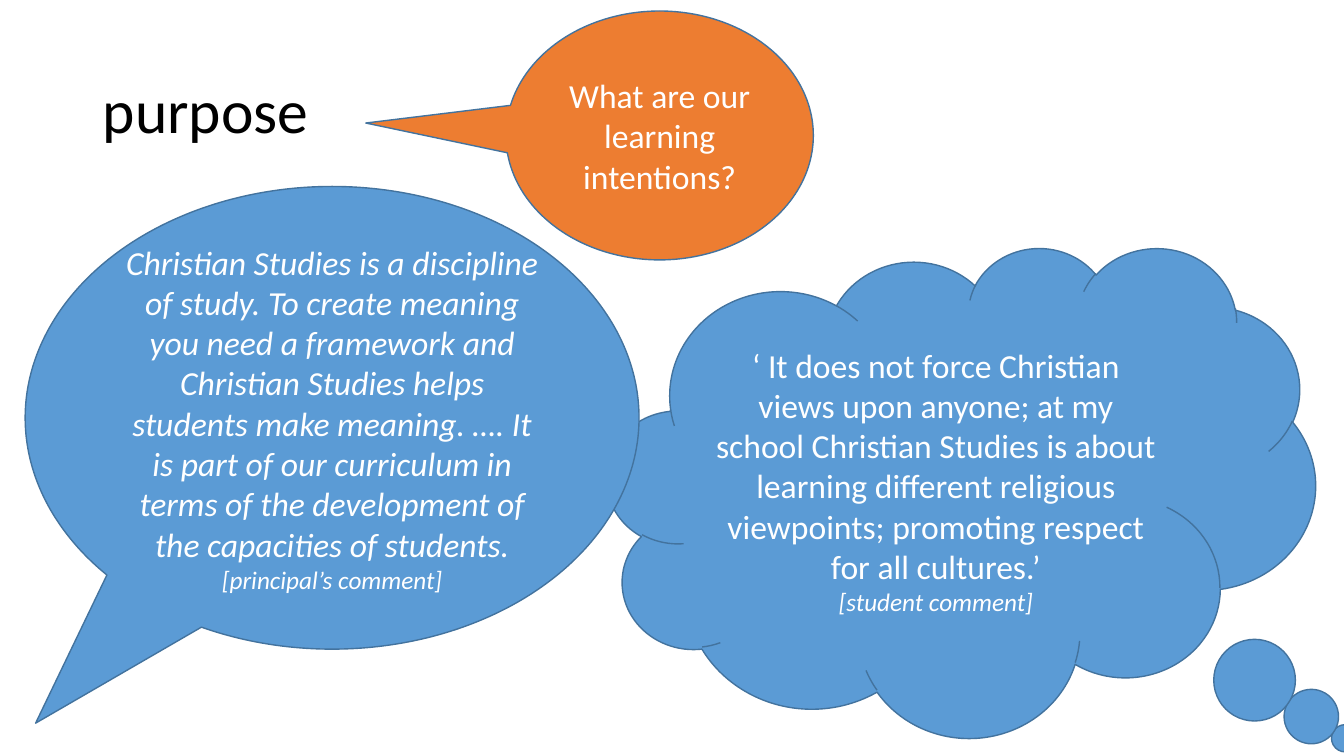
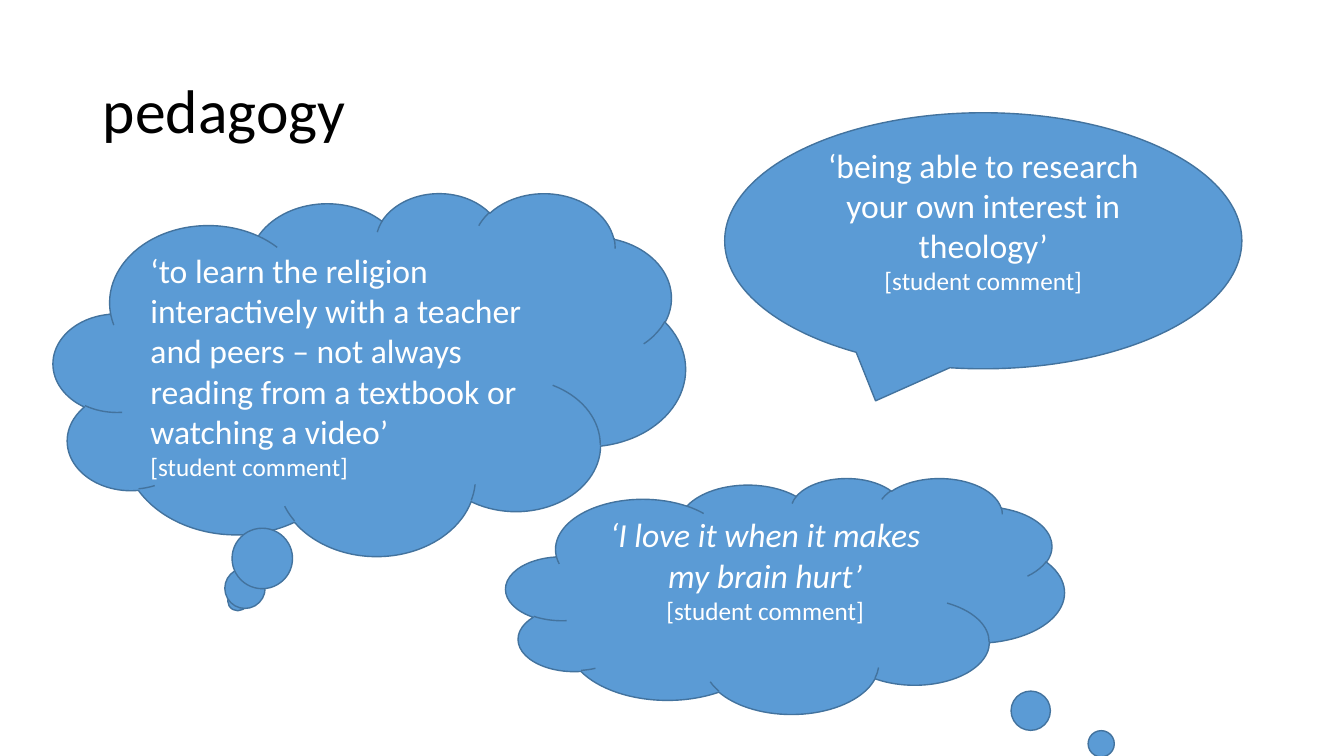
import dataclasses

import pptx
import pptx.dml.color
import pptx.enum.shapes
import pptx.enum.text
import pptx.util

Pt = pptx.util.Pt
RGBColor = pptx.dml.color.RGBColor
Align = pptx.enum.text.PP_ALIGN
Anchor = pptx.enum.text.MSO_ANCHOR
Shape = pptx.enum.shapes.MSO_SHAPE

THOUGHT = Shape.CLOUD_CALLOUT
SPEECH = Shape.OVAL_CALLOUT


@dataclasses.dataclass(frozen=True)
class Theme:
    font: str = "Calibri"
    title_color: RGBColor = RGBColor(0x00, 0x00, 0x00)
    text_color: RGBColor = RGBColor(0xFF, 0xFF, 0xFF)
    blue: RGBColor = RGBColor(0x5B, 0x9B, 0xD5)
    orange: RGBColor = RGBColor(0xED, 0x7D, 0x31)
    outline: RGBColor = RGBColor(0x43, 0x73, 0x9E)
    title_size: int = 44
    quote_size: int = 24
    credit_size: int = 18
    outline_width: int = 1
    inset: float = 3.6
    quote_line: float = 29.3


THEME = Theme()


def style_font(font, size, color, italic=False):
    font.name = THEME.font
    font.size = Pt(size)
    font.color.rgb = color
    font.italic = italic


def add_titled_slide(presentation, title):
    slide = presentation.slides.add_slide(presentation.slide_layouts[5])
    shape = slide.shapes.title
    shape.left, shape.top = Pt(66.2), Pt(28.8)
    shape.width, shape.height = Pt(828), Pt(104.4)
    frame = shape.text_frame
    frame.text = title
    frame.word_wrap = True
    frame.vertical_anchor = Anchor.MIDDLE
    paragraph = frame.paragraphs[0]
    paragraph.alignment = Align.LEFT
    paragraph.line_spacing = 0.9
    style_font(paragraph.font, THEME.title_size, THEME.title_color)
    return slide


def add_callout(slide, kind, box, tail=None, fill=THEME.blue, raised_lines=0):
    shape = slide.shapes.add_shape(kind, *map(Pt, box))
    shape.shadow.inherit = False
    shape.fill.solid()
    shape.fill.fore_color.rgb = fill
    shape.line.color.rgb = THEME.outline
    shape.line.width = Pt(THEME.outline_width)
    for index, offset in enumerate(tail or ()):
        shape.adjustments[index] = offset
    frame = shape.text_frame
    frame.word_wrap = True
    frame.vertical_anchor = Anchor.MIDDLE
    frame.margin_bottom = Pt(THEME.inset + raised_lines * THEME.quote_line)
    return frame


def write_quote(frame, quote, italic=False, alignment=Align.CENTER):
    paragraph = frame.paragraphs[0]
    paragraph.text = quote
    paragraph.alignment = alignment
    style_font(paragraph.font, THEME.quote_size, THEME.text_color, italic)
    return paragraph


def write_credit(frame, credit, italic=False, alignment=Align.CENTER):
    paragraph = frame.add_paragraph()
    paragraph.text = credit
    paragraph.alignment = alignment
    style_font(paragraph.font, THEME.credit_size, THEME.text_color, italic)


def append_credit(paragraph, credit):
    run = paragraph.add_run()
    run.text = credit
    run.font.size = Pt(THEME.credit_size)


def build_purpose(presentation):
    slide = add_titled_slide(presentation, "purpose")

    student = add_callout(slide, THOUGHT, (433.4, 176.4, 506.2, 349.9), (0.542, 0.503))
    write_quote(
        student,
        "‘ It does not force Christian views upon anyone; at my school Christian "
        "Studies is about learning different religious viewpoints; promoting "
        "respect for all cultures.’",
    )
    write_credit(student, "[student comment]", italic=True)

    principal = add_callout(slide, SPEECH, (18, 133.2, 438.5, 330.5), (-0.483, 0.66))
    statement = write_quote(
        principal,
        "Christian Studies is a discipline of study. To create meaning you need a "
        "framework and Christian Studies helps students make meaning. …. It is part "
        "of our curriculum in terms of the development of the capacities of students. ",
        italic=True,
    )
    append_credit(statement, "[principal’s comment]")

    question = add_callout(
        slide, SPEECH, (361.4, 7.9, 219.6, 177.8), (-0.956, -0.05), THEME.orange
    )
    write_quote(question, "What are our learning intentions?")


def build_pedagogy(presentation):
    slide = add_titled_slide(presentation, "pedagogy")
    credit = "[student comment]"

    interaction = add_callout(slide, THOUGHT, (38.2, 137.5, 451.4, 259.2))
    write_quote(
        interaction,
        "‘to learn the religion interactively with a teacher and peers – not always "
        "reading from a textbook or watching a video’",
        alignment=Align.LEFT,
    )
    write_credit(interaction, credit, alignment=Align.LEFT)

    research = add_callout(slide, SPEECH, (517.7, 80.6, 369.4, 182.9), raised_lines=1)
    write_quote(research, "‘being able to research your own interest in theology’")
    write_credit(research, credit)

    challenge = add_callout(
        slide, THOUGHT, (361.4, 341.3, 398.9, 168.5), (0.671, 0.744), raised_lines=1
    )
    write_quote(challenge, "‘I love it when it makes my brain hurt’", italic=True)
    write_credit(challenge, credit)


def main():
    presentation = pptx.Presentation()
    presentation.slide_width = Pt(960)
    presentation.slide_height = Pt(540)
    build_purpose(presentation)
    build_pedagogy(presentation)
    presentation.save("out.pptx")


if __name__ == "__main__":
    main()
